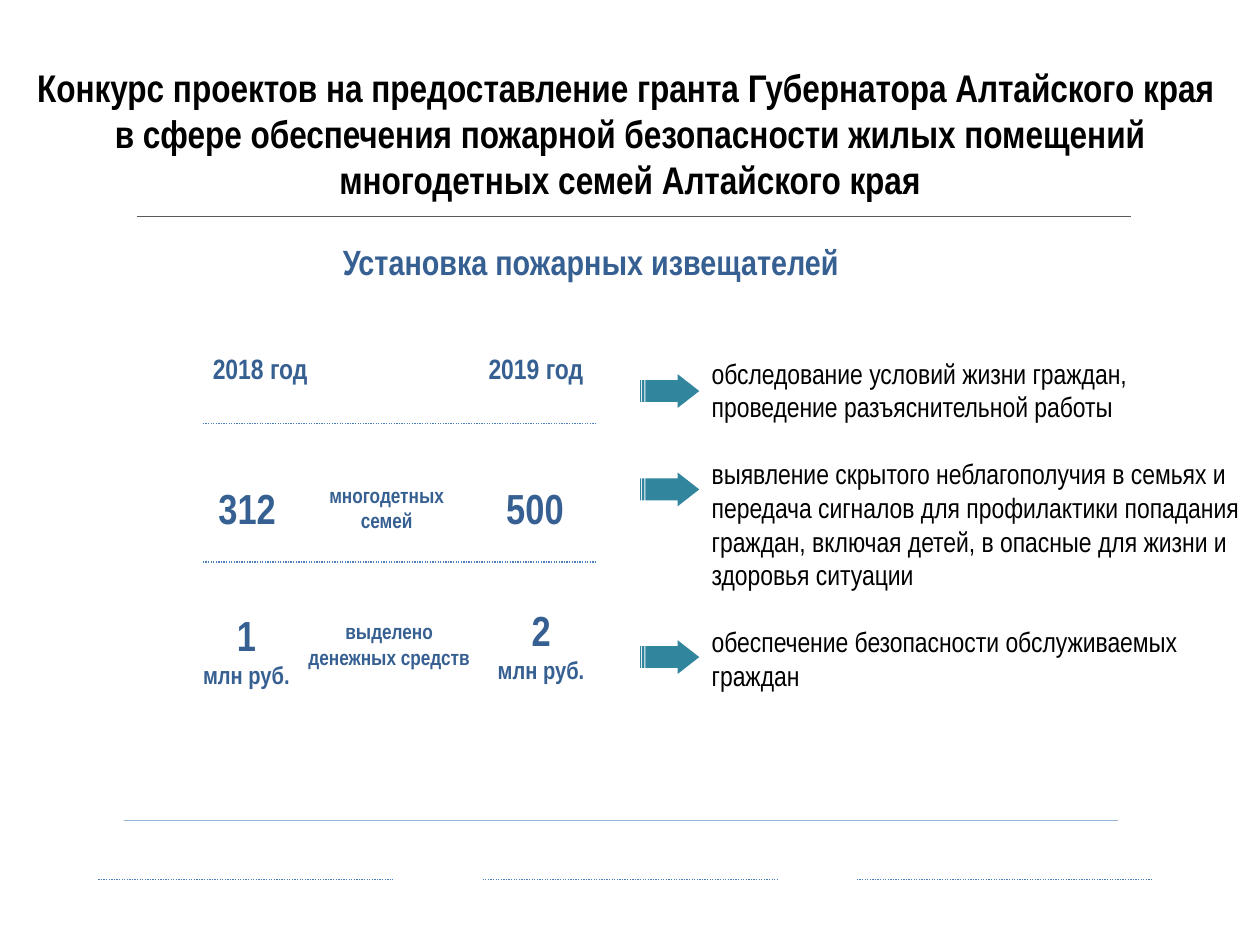
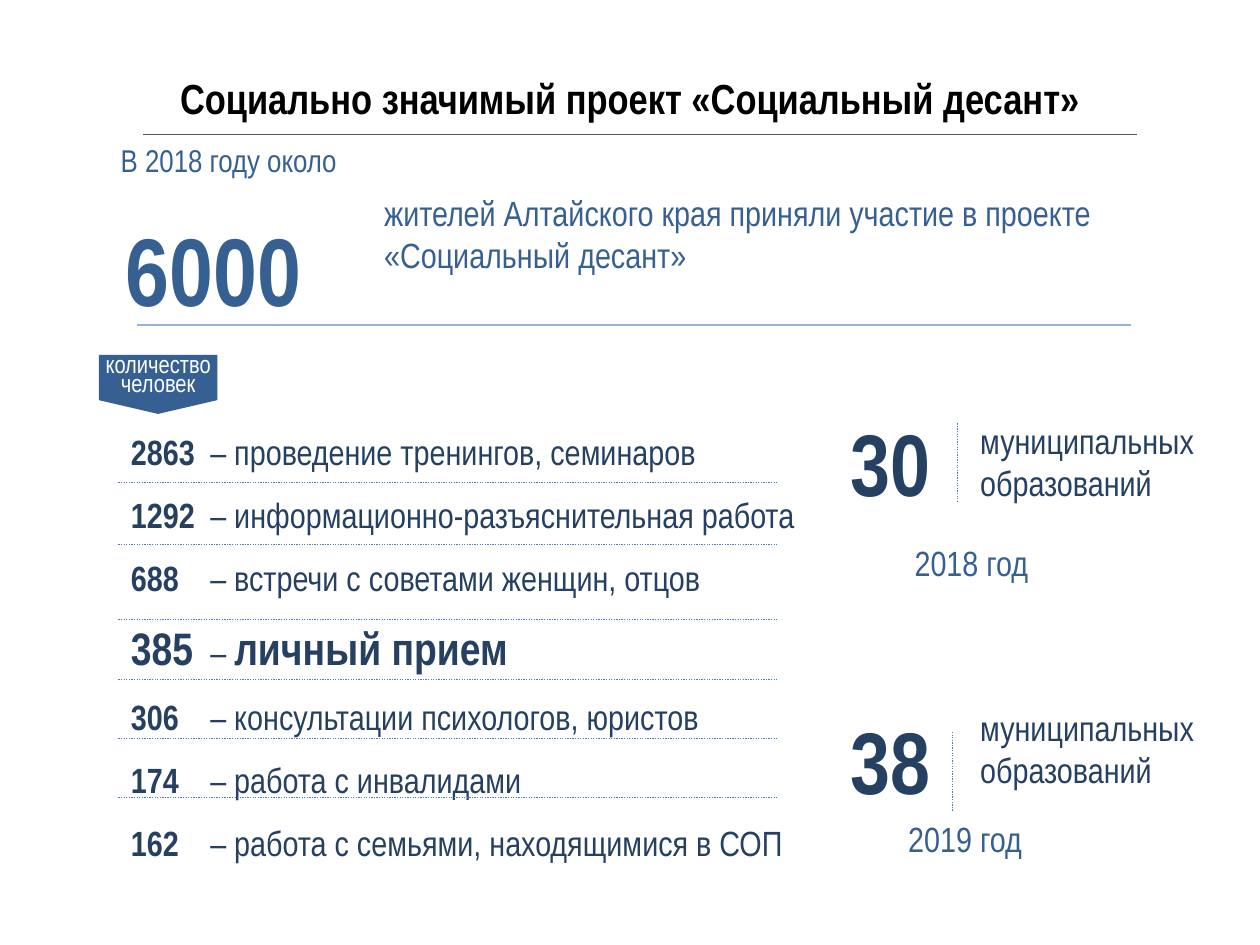
from dataclasses import dataclass

from lxml.etree import SubElement
from pptx import Presentation
from pptx.dml.color import RGBColor
from pptx.enum.dml import MSO_LINE
from pptx.enum.shapes import MSO_CONNECTOR, MSO_SHAPE
from pptx.enum.text import MSO_ANCHOR, MSO_AUTO_SIZE, PP_ALIGN
from pptx.oxml.ns import qn
from pptx.util import Pt

FONT = "Arial Narrow"
BLACK, WHITE = "000000", "FFFFFF"
BLUE, NAVY, TEAL = "376092", "254061", "31859C"
DOT_BLUE, PALE_BLUE, GREY = "4B7EBC", "95B3D7", "595959"
LEFT, CENTER = PP_ALIGN.LEFT, PP_ALIGN.CENTER
TOP, MIDDLE = MSO_ANCHOR.TOP, MSO_ANCHOR.MIDDLE


@dataclass(frozen=True)
class Label:
    text: str
    left: float
    top: float
    width: float
    height: float
    size: float
    color: str = BLUE
    bold: bool = False
    align: PP_ALIGN = LEFT
    anchor: MSO_ANCHOR = TOP
    gap: float = 0
    line_height: float | None = None
    small_size: float | None = None


@dataclass(frozen=True)
class Rule:
    x1: float
    y1: float
    x2: float
    y2: float
    color: str = DOT_BLUE
    dotted: bool = True


@dataclass(frozen=True)
class Activity:
    count: str
    name: str
    size: float = 20
    name_bold: bool = False


def rgb(color: str) -> RGBColor:
    return RGBColor.from_string(color)


def format_run(run, size: float, color: str, bold: bool) -> None:
    run.font.name = FONT
    run.font.size = Pt(size)
    run.font.bold = bold
    run.font.color.rgb = rgb(color)


def place(shape, label: Label) -> None:
    shape.left, shape.top = Pt(label.left), Pt(label.top)
    shape.width, shape.height = Pt(label.width), Pt(label.height)
    frame = shape.text_frame
    frame.text = label.text
    frame.word_wrap = True
    frame.auto_size = MSO_AUTO_SIZE.NONE
    frame.vertical_anchor = label.anchor
    for index, paragraph in enumerate(frame.paragraphs):
        paragraph.alignment = label.align
        if index and label.gap:
            paragraph.space_before = Pt(label.gap)
        if label.line_height:
            paragraph.line_spacing = Pt(label.line_height)
        size = label.small_size if index and label.small_size else label.size
        for run in paragraph.runs:
            format_run(run, size, label.color, label.bold)


def add_label(slide, label: Label) -> None:
    place(slide.shapes.add_textbox(0, 0, 0, 0), label)


def add_rule(slide, rule: Rule) -> None:
    connector = slide.shapes.add_connector(
        MSO_CONNECTOR.STRAIGHT, Pt(rule.x1), Pt(rule.y1), Pt(rule.x2), Pt(rule.y2))
    connector.line.color.rgb = rgb(rule.color)
    connector.line.width = Pt(0.75)
    if rule.dotted:
        connector.line.dash_style = MSO_LINE.ROUND_DOT
    SubElement(connector._element.spPr, qn("a:effectLst"))


def add_solid(slide, kind: MSO_SHAPE, box: tuple[float, ...], color: str,
              adjustments: tuple[float, ...], rotation: float = 0) -> None:
    solid = slide.shapes.add_shape(kind, *(Pt(length) for length in box))
    solid.shadow.inherit = False
    solid.fill.solid()
    solid.fill.fore_color.rgb = rgb(color)
    solid.line.fill.background()
    solid.rotation = rotation
    for index, value in enumerate(adjustments):
        solid.adjustments[index] = value


def add_activities(slide, activities: list[Activity]) -> None:
    listing = slide.shapes.add_textbox(Pt(67.7), Pt(242.6), Pt(410), Pt(257))
    frame = listing.text_frame
    frame.word_wrap = True
    for index, activity in enumerate(activities):
        paragraph = frame.add_paragraph() if index else frame.paragraphs[0]
        if index:
            paragraph.space_before = Pt(12)
        tabs = SubElement(paragraph._p.get_or_add_pPr(), qn("a:tabLst"))
        SubElement(tabs, qn("a:tab"), pos=str(Pt(45.4)), algn="l")
        parts = [(activity.count, activity.size, True), ("\t– ", 20, False),
                 (activity.name, activity.size, activity.name_bold)]
        for text, size, bold in parts:
            run = paragraph.add_run()
            run.text = text
            format_run(run, size, NAVY, bold)


def new_slide(deck, title: Label, underline: Rule):
    slide = deck.slides.add_slide(deck.slide_layouts[5])
    place(slide.shapes.title, title)
    add_rule(slide, underline)
    return slide


def title_label(text: str, top: float, height: float, size: float) -> Label:
    return Label(text, 0, top, 720, height, size, BLACK, True, CENTER, MIDDLE)


def build_grant_slide(deck) -> None:
    title = ("Конкурс проектов на предоставление гранта Губернатора Алтайского края \v"
             "в сфере обеспечения пожарной безопасности жилых помещений "
             "многодетных семей Алтайского края")
    slide = new_slide(deck, title_label(title, 31, 90, 22),
                      Rule(78.5, 123.8, 646.5, 123.8, GREY, False))
    figures = [
        ("Установка пожарных извещателей", 163.4, 129.6, 348.5, 39.6, 20, None),
        ("2018 год", 106.6, 196.6, 84, 28, 16, None),
        ("2019 год", 264.2, 196.6, 84, 28, 16, None),
        ("312", 110.2, 272, 62, 36, 24, None),
        ("многодетных семей", 168.5, 270, 105, 40, 12, None),
        ("500", 257.8, 272, 95.8, 36, 24, None),
        ("1\nмлн руб.", 95.8, 344, 90, 54, 24, 14),
        ("выделено\nденежных средств", 163.4, 348, 118, 40, 12, None),
        ("2\nмлн руб.", 264.2, 341, 90, 54, 24, 14),
    ]
    for text, left, top, width, height, size, small in figures:
        add_label(slide, Label(text, left, top, width, height, size, bold=True,
                               align=CENTER, anchor=MIDDLE, small_size=small))
    effects = [
        "обследование условий жизни граждан, проведение разъяснительной работы",
        "выявление скрытого неблагополучия в семьях и передача сигналов для "
        "профилактики попадания граждан, включая детей, в опасные для жизни "
        "и здоровья ситуации",
        "обеспечение безопасности обслуживаемых граждан",
    ]
    add_label(slide, Label("\n".join(effects), 399.6, 200, 320.4, 205, 16, BLACK,
                           gap=19.2))
    for top in (213.8, 270, 365.8):
        add_solid(slide, MSO_SHAPE.STRIPED_RIGHT_ARROW, (365.8, top, 33.8, 19.4),
                  TEAL, (0.644, 0.639))
    for y in (241.9, 321.1):
        add_rule(slide, Rule(115.9, y, 341.3, y))
    for left in (56.2, 275.8, 489.6):
        add_rule(slide, Rule(left, 502.6, left + 168.5, 502.6))
    add_rule(slide, Rule(70.6, 468.7, 639, 468.7, PALE_BLUE, False))


def build_landing_slide(deck) -> None:
    slide = new_slide(
        deck, title_label("Социально значимый проект «Социальный десант»", 38, 36, 24),
        Rule(82, 77, 650, 77, GREY, False))
    add_label(slide, Label("В 2018 году около", 61.9, 77, 140.4, 30, 18))
    add_label(slide, Label("6000", 64.8, 116.6, 125, 73.4, 55, bold=True))
    add_label(slide, Label("жителей Алтайского края приняли участие в проекте\n"
                           "«Социальный десант»", 212.4, 105.8, 433.4, 60, 20))
    add_rule(slide, Rule(78.5, 185.8, 646.5, 185.8, PALE_BLUE, False))

    add_solid(slide, MSO_SHAPE.PENTAGON, (73.4, 185.8, 33.8, 67.7), BLUE, (0.233,), 90)
    add_label(slide, Label("количество\nчеловек", 45.4, 201.6, 90, 30, 14, WHITE,
                           align=CENTER, line_height=11))
    add_activities(slide, [
        Activity("2863", "проведение тренингов, семинаров"),
        Activity("1292", "информационно-разъяснительная работа"),
        Activity("688", "встречи с советами женщин, отцов"),
        Activity("385", "личный прием", 26, True),
        Activity("306", "консультации психологов, юристов"),
        Activity("174", "работа с инвалидами"),
        Activity("162", "работа с семьями, находящимися в СОП"),
    ])
    for y in (275.8, 311, *(354.2 + 33.9 * row for row in range(4))):
        add_rule(slide, Rule(67.7, y, 444.2, y))

    coverage = [
        ("30", 230.4, 236.2, 547.2, 241.9, "2018 год", 515.5, 306),
        ("38", 400.3, 400.3, 544.3, 418.3, "2019 год", 511.9, 463.7),
    ]
    for count, count_top, unit_top, bar_x, bar_top, year, year_left, year_top in coverage:
        add_label(slide, Label(count, 478.8, count_top, 66, 67, 50, NAVY, True))
        add_label(slide, Label("муниципальных\nобразований", 553, unit_top, 167, 55.4,
                               20, NAVY))
        add_rule(slide, Rule(bar_x, bar_top, bar_x, bar_top + 45))
        add_label(slide, Label(year, year_left, year_top, 90, 31.7, 20))


def main() -> None:
    """Build the two slides and save the deck."""
    deck = Presentation()
    deck.slide_width, deck.slide_height = Pt(720), Pt(540)
    build_grant_slide(deck)
    build_landing_slide(deck)
    deck.save("out.pptx")


if __name__ == "__main__":
    main()
